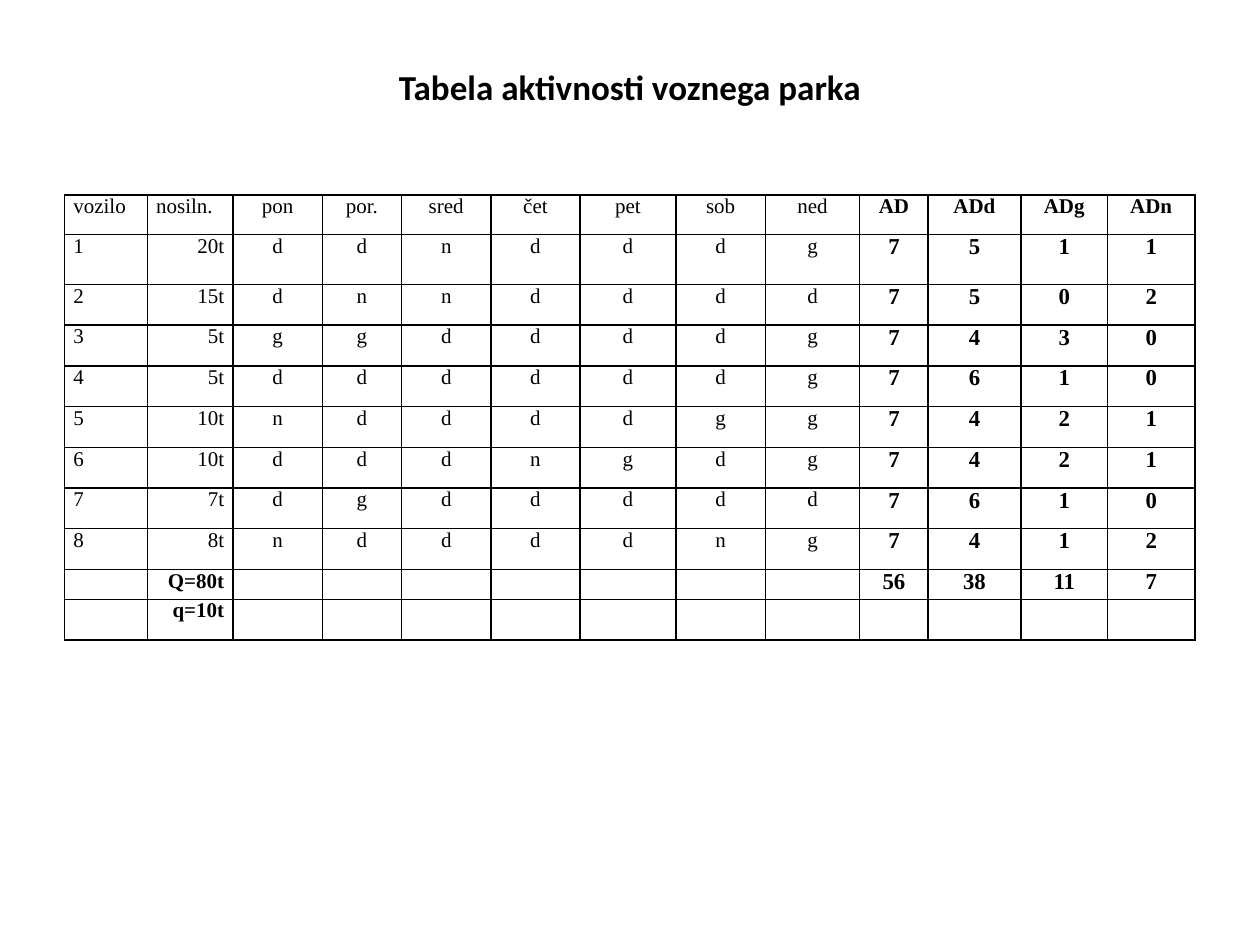
from dataclasses import dataclass

from lxml.etree import SubElement
from pptx import Presentation
from pptx.dml.color import RGBColor
from pptx.enum.text import MSO_ANCHOR, PP_ALIGN as Align
from pptx.oxml.ns import qn
from pptx.util import Cm, Pt


@dataclass(frozen=True)
class Theme:
    """Colours, fonts and type sizes of the slide."""
    ink: RGBColor = RGBColor(0, 0, 0)
    title_font: str = "Calibri"
    table_font: str = "Times New Roman"
    title_size: int = 20
    body_size: int = 12
    count_size: int = 13
    border: int = 1


THEME = Theme()
BLANK_LAYOUT = 6
HEADER = ["vozilo", "nosiln.", "pon", "por.", "sred", "čet", "pet", "sob", "ned",
          "AD", "ADd", "ADg", "ADn"]
VEHICLES = [(20, "ddndddg"), (15, "dnndddd"), (5, "ggddddg"), (5, "ddddddg"),
            (10, "nddddgg"), (10, "dddngdg"), (7, "dgddddd"), (8, "nddddng")]
FIRST_DAY, FIRST_COUNT = HEADER.index("pon"), HEADER.index("AD")
COLUMN_WIDTHS = [1.67, 1.73, 1.8, 1.6, 1.8, 1.8, 1.93, 1.81, 1.9, 1.38, 1.87, 1.75, 1.76]
ROW_HEIGHTS = [0.8, 1] + [0.82] * 7 + [0.6, 0.82]


def activity_rows():
    """Return all table rows, with the day counts and totals worked out."""
    counts = [[len(days), *map(days.count, "dgn")] for _, days in VEHICLES]
    loads = [load for load, _ in VEHICLES]
    gap = [""] * (FIRST_COUNT - FIRST_DAY)
    body = [[number, f"{load}t", *days, *count]
            for number, ((load, days), count) in enumerate(zip(VEHICLES, counts), 1)]
    total = ["", f"Q={sum(loads)}t", *gap, *map(sum, zip(*counts))]
    mean = ["", f"q={sum(loads) // len(loads)}t", *gap, *[""] * len(counts[0])]
    return [HEADER, *body, total, mean]


def write_text(frame, text, *, font, size, bold=False, align=Align.LEFT):
    """Write one formatted paragraph into a text frame."""
    paragraph = frame.paragraphs[0]
    paragraph.alignment = align
    if not text:
        SubElement(paragraph._p, qn("a:endParaRPr"), sz=str(size * 100))
        return
    run = paragraph.add_run()
    run.text = text
    run.font.name = font
    run.font.size = Pt(size)
    run.font.bold = bold
    run.font.color.rgb = THEME.ink


def style_cell(cell):
    """Give a cell thin borders, narrow side margins and no fill."""
    cell.margin_left = cell.margin_right = Cm(0.18)
    cell.margin_top = cell.margin_bottom = 0
    properties = cell._tc.get_or_add_tcPr()
    for side in ("lnL", "lnR", "lnT", "lnB"):
        line = SubElement(properties, qn(f"a:{side}"), w=str(Pt(THEME.border)))
        fill = SubElement(line, qn("a:solidFill"))
        SubElement(fill, qn("a:srgbClr"), val=str(THEME.ink))
    cell.fill.background()


def column_alignment(row, column):
    """Return the alignment of a cell from its place in the table."""
    if column >= FIRST_DAY:
        return Align.CENTER
    return Align.RIGHT if row and column else Align.LEFT


def add_title(slide, text, left, top, width, height):
    """Place the centred slide title in the given box."""
    frame = slide.shapes.add_textbox(left, top, width, height).text_frame
    frame.word_wrap = True
    frame.vertical_anchor = MSO_ANCHOR.MIDDLE
    write_text(frame, text, font=THEME.title_font, size=THEME.title_size,
               bold=True, align=Align.CENTER)


def add_activity_table(slide, rows, left, top, width, height):
    """Place the fleet activity table in the given box."""
    table = slide.shapes.add_table(len(rows), len(HEADER), left, top, width, height).table
    table.first_row = table.horz_banding = False
    for column, share in zip(table.columns, COLUMN_WIDTHS):
        column.width = int(width * share / sum(COLUMN_WIDTHS))
    for row, share in zip(table.rows, ROW_HEIGHTS):
        row.height = int(height * share / sum(ROW_HEIGHTS))
    for r, values in enumerate(rows):
        for c, value in enumerate(values):
            cell = table.cell(r, c)
            style_cell(cell)
            is_count = c >= FIRST_COUNT
            write_text(cell.text_frame, str(value), font=THEME.table_font,
                       size=THEME.count_size if r and is_count else THEME.body_size,
                       bold=is_count or r > len(VEHICLES),
                       align=column_alignment(r, c))


def main():
    """Build and save the presentation."""
    presentation = Presentation()
    presentation.slide_width, presentation.slide_height = Cm(25.4), Cm(19.05)
    slide = presentation.slides.add_slide(presentation.slide_layouts[BLANK_LAYOUT])
    add_title(slide, "Tabela aktivnosti voznega parka",
              Cm(1.27), Cm(0.76), Cm(22.86), Cm(1.96))
    add_activity_table(slide, activity_rows(), Cm(1.3), Cm(3.93), Cm(22.8), Cm(8.98))
    presentation.save("out.pptx")


if __name__ == "__main__":
    main()
